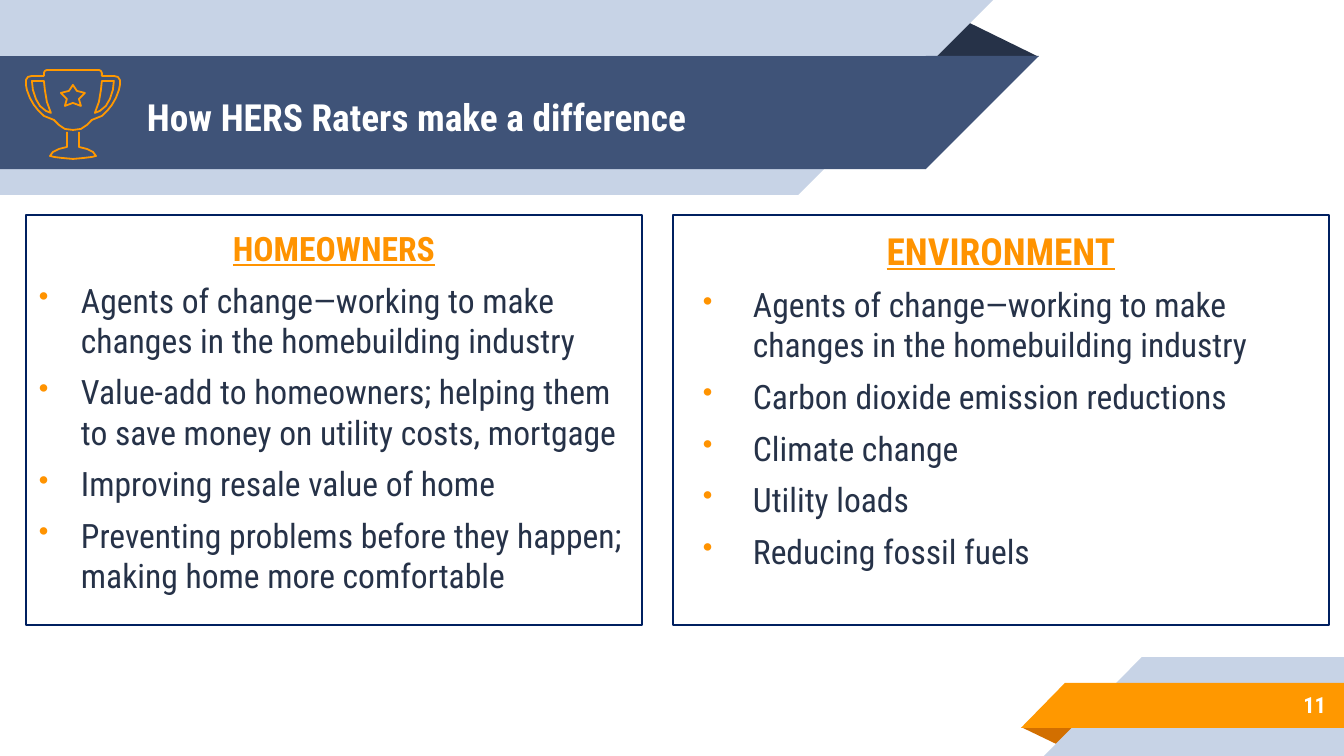
from lxml.etree import SubElement
from pptx import Presentation
from pptx.dml.color import RGBColor
from pptx.enum.shapes import MSO_SHAPE
from pptx.enum.text import MSO_ANCHOR, PP_ALIGN
from pptx.oxml.ns import qn
from pptx.util import Pt

PX = 9144000 / 1344
FONT = "Roboto Condensed"
NAVY, PALE, ORANGE, INK = "3F5378", "C7D3E6", "FF9800", "263248"


def rgb(value):
    return RGBColor.from_string(value)


def format_text(p, size, color, bold=False, underline=False):
    for r in p.runs:
        r.font.name = FONT
        r.font.size = Pt(size)
        r.font.color.rgb = rgb(color)
        r.font.bold = bold
        r.font.underline = underline


prs = Presentation()
prs.slide_width, prs.slide_height = round(1344 * PX), round(756 * PX)
s = prs.slides.add_slide(prs.slide_layouts[5])

RECT, CORNER, FOLD = MSO_SHAPE.RECTANGLE, MSO_SHAPE.RIGHT_TRIANGLE, MSO_SHAPE.ISOSCELES_TRIANGLE
ribbons = [
    (FOLD, 925, 19, 114, 38, INK, 0, False),
    (RECT, 0, 0, 798, 195, PALE, 180, True),
    (CORNER, 798, 0, 195, 195, PALE, 180, True),
    (RECT, 0, 56, 926, 113, NAVY, 180, True),
    (CORNER, 926, 56, 113, 113, NAVY, 180, True),
    (FOLD, 1021, 727, 58, 19, "D26F00", 180, False),
    (RECT, 1142, 657, 202, 99, PALE, 0, True),
    (CORNER, 1044, 657, 98, 99, PALE, 0, True),
    (RECT, 1065, 683, 279, 45, ORANGE, 0, True),
    (CORNER, 1021, 683, 44, 45, ORANGE, 0, True),
]
for kind, x, y, w, h, color, rotation, flipped in ribbons:
    sp = s.shapes.add_shape(kind, *(round(v * PX) for v in (x, y, w, h)))
    sp.shadow.inherit = False
    sp.fill.solid()
    sp.fill.fore_color.rgb = rgb(color)
    sp.line.fill.background()
    sp.rotation = rotation
    if kind == FOLD:
        sp.adjustments[0] = 0.32
    if flipped:
        sp._element.spPr.find(qn("a:xfrm")).set("flipH", "1")

title = s.shapes.title
title._element.getparent().append(title._element)
title.left, title.top, title.width, title.height = (round(v * PX) for v in (134, 60, 773, 113))
title.text_frame.text = "How HERS Raters make a difference"

number = s.shapes.add_textbox(*(round(v * PX) for v in (1120, 681, 219, 47)))
number.text_frame.text = "11"

for sp, size, align in [(title, 20, PP_ALIGN.LEFT), (number, 12, PP_ALIGN.RIGHT)]:
    tf = sp.text_frame
    tf.word_wrap = True
    tf.vertical_anchor = MSO_ANCHOR.MIDDLE
    tf.margin_left = tf.margin_right = tf.margin_top = tf.margin_bottom = round(13 * PX)
    tf.paragraphs[0].alignment = align
    format_text(tf.paragraphs[0], size, "FFFFFF", bold=True)

panels = [
    (26, 616, 18, 42, 42, [
        "HOMEOWNERS",
        "Agents of change—working to make changes in the homebuilding industry",
        "Value-add to homeowners; helping them to save money on utility costs, mortgage",
        "Improving resale value of home",
        "Preventing problems before they happen; making home more comfortable",
    ]),
    (673, 656, 20, 67, 50, [
        "ENVIRONMENT",
        "Agents of change—working to make changes in the homebuilding industry",
        "Carbon dioxide emission reductions",
        "Climate change",
        "Utility loads",
        "Reducing fossil fuels",
    ]),
]
for x, w, heading_size, margin, hanging, lines in panels:
    sp = s.shapes.add_shape(RECT, *(round(v * PX) for v in (x, 215, w, 410)))
    sp.shadow.inherit = False
    sp.fill.background()
    sp.line.color.rgb = rgb("002060")
    sp.line.width = Pt(0.75)
    tf = sp.text_frame
    tf.word_wrap = True
    tf.vertical_anchor = MSO_ANCHOR.TOP
    tf.margin_left = tf.margin_right = tf.margin_top = tf.margin_bottom = round(13 * PX)
    tf.text = "\n".join(lines)
    for i, p in enumerate(tf.paragraphs):
        p.space_before = Pt(6)
        if i == 0:
            p.alignment = PP_ALIGN.CENTER
            format_text(p, heading_size, "FF9300", bold=True, underline=True)
            continue
        p.alignment = PP_ALIGN.LEFT
        format_text(p, 18, INK)
        pPr = p._p.get_or_add_pPr()
        pPr.set("marL", str(round(margin * PX)))
        pPr.set("indent", str(round(-hanging * PX)))
        SubElement(SubElement(pPr, qn("a:buClr")), qn("a:srgbClr")).set("val", "FF9300")
        SubElement(pPr, qn("a:buSzPct")).set("val", "85000")
        SubElement(pPr, qn("a:buChar")).set("char", "•")

AXIS = 73
half_base = [(67, 132), (67, 147), (59, 149), (53, 152), (50, 156), (54, 157), (62, 158), (73, 159)]
half_cup = [(73, 70), (47, 70), (45, 71), (44, 73), (44, 76), (32, 76), (28, 77), (26, 80),
            (26, 85), (27, 90), (30, 98), (34, 105), (38, 110), (44, 116), (54, 120),
            (59, 125), (65, 129), (73, 130)]
handle = [(32, 81), (44, 81), (45, 90), (47, 102), (51, 113), (46, 111), (40, 106), (36, 99), (33, 90)]
half_star = [(73, 85), (69, 91), (61, 93), (67, 99), (65, 106), (73, 103)]

base, cup, star = (
    half + [(2 * AXIS - x, y) for x, y in reversed(half[:-1])]
    for half in (half_base, half_cup, half_star)
)
right_handle = [(2 * AXIS - x, y) for x, y in handle]

for outlines, closed in [([base], False), ([cup, handle, star, right_handle], True)]:
    builder = s.shapes.build_freeform(*outlines[0][0], scale=PX)
    for i, points in enumerate(outlines):
        if i:
            builder.move_to(*points[0])
        builder.add_line_segments(points[1:], close=closed)
    sp = builder.convert_to_shape()
    sp.shadow.inherit = False
    sp.fill.background()
    sp.line.color.rgb = rgb(ORANGE)
    sp.line.width = Pt(0.96)

prs.save("out.pptx")
